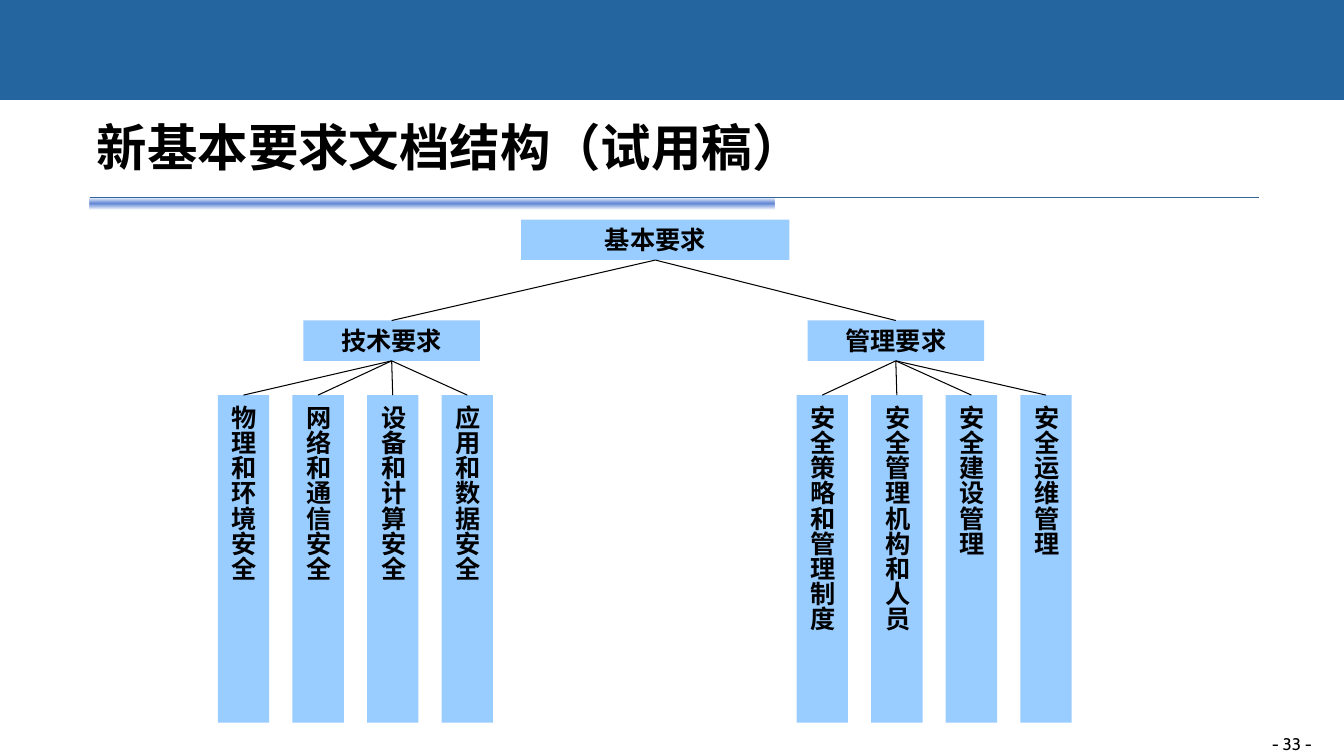
from lxml import etree
from pptx import Presentation
from pptx.dml.color import RGBColor
from pptx.enum.shapes import MSO_CONNECTOR as Connector, MSO_SHAPE as Shape
from pptx.enum.text import MSO_ANCHOR as Anchor, PP_ALIGN as Align
from pptx.oxml import parse_xml
from pptx.oxml.ns import nsdecls, qn
from pptx.util import Inches, Pt

COLORS = {"banner": "25659F", "box": "99CCFF", "text": "000000",
          "rule": "336699", "edge": "5781D5", "middle": "6387D6"}
CJK_FONT = "Noto Sans CJK SC"
BRANCHES = [
    ("技术要求", 3.01, 2.16,
     ["物理和环境安全", "网络和通信安全", "设备和计算安全", "应用和数据安全"]),
    ("管理要求", 8.01, 7.9,
     ["安全策略和管理制度", "安全管理机构和人员", "安全建设管理", "安全运维管理"]),
]
COLUMN_PITCH = 0.74

deck = Presentation()
deck.slide_width, deck.slide_height = Inches(13.33), Inches(7.5)
page = deck.slides.add_slide(deck.slide_layouts[5])


def add_box(left, top, width, height, color="box", text="", vertical=False):
    box = page.shapes.add_shape(Shape.RECTANGLE, *map(Inches, (left, top, width, height)))
    box.shadow.inherit = False
    box.fill.solid()
    box.fill.fore_color.rgb = RGBColor.from_string(COLORS[color])
    box.line.fill.background()
    if text:
        write(box, text, 18, CJK_FONT, True, Align.LEFT if vertical else Align.CENTER)
        box.text_frame.vertical_anchor = Anchor.MIDDLE
        if vertical:
            box.text_frame._txBody.bodyPr.set("vert", "eaVert")
    return box


def write(shape, text, size, font, bold, align):
    shape.text_frame.word_wrap = True
    para = shape.text_frame.paragraphs[0]
    para.alignment = align
    span = para.add_run()
    span.text = text
    for name, value in {"size": Pt(size), "name": font, "bold": bold}.items():
        setattr(span.font, name, value)
    span.font.color.rgb = RGBColor.from_string(COLORS["text"])
    east_asian = etree.SubElement(span.font._element, qn("a:ea"))
    east_asian.set("typeface", CJK_FONT)


add_box(0, 0, 13.33, 0.99, "banner")

bar = add_box(0.89, 1.96, 6.79, 0.12, "middle")
gradient = parse_xml(
    f'<a:gradFill {nsdecls("a")} rotWithShape="1"><a:gsLst>'
    f'<a:gs pos="0"><a:srgbClr val="{COLORS["edge"]}"><a:alpha val="0"/></a:srgbClr></a:gs>'
    f'<a:gs pos="50000"><a:srgbClr val="{COLORS["middle"]}"/></a:gs>'
    f'<a:gs pos="100000"><a:srgbClr val="{COLORS["edge"]}"><a:alpha val="0"/></a:srgbClr></a:gs>'
    '</a:gsLst><a:lin ang="5400000" scaled="0"/></a:gradFill>')
bar_format = bar._element.spPr
bar_format.replace(bar_format.find(qn("a:solidFill")), gradient)

title = page.shapes.title
title_place = {"left": 0.92, "top": 0.73, "width": 11.5, "height": 1.45}
for name, value in title_place.items():
    setattr(title, name, Inches(value))
frame_format = {"margin_left": Inches(0.04), "margin_right": Inches(0.04),
                "margin_top": 0, "margin_bottom": 0, "vertical_anchor": Anchor.MIDDLE}
for name, value in frame_format.items():
    setattr(title.text_frame, name, value)
write(title, "新基本要求文档结构（试用稿）", 36, "DejaVu Sans", True, Align.LEFT)

root = add_box(5.17, 2.18, 2.66, 0.4, text="基本要求")
links = []
for branch_name, branch_left, first_left, topics in BRANCHES:
    branch = add_box(branch_left, 3.18, 1.75, 0.4, text=branch_name)
    links.append((root, branch))
    for index, topic in enumerate(topics):
        column = add_box(first_left + index * COLUMN_PITCH, 3.92, 0.51, 3.25,
                         text=topic, vertical=True)
        links.append((branch, column))

rule = page.shapes.add_connector(
    Connector.STRAIGHT, Inches(0.89), Inches(1.96), Inches(12.49), Inches(1.96))
lines = [(rule, "rule")]
for parent, child in links:
    link = page.shapes.add_connector(Connector.STRAIGHT, 0, 0, 0, 0)
    link.begin_connect(parent, 2)
    link.end_connect(child, 0)
    lines.append((link, "text"))
for line, color in lines:
    line.line.width = Pt(0.75)
    line.line.color.rgb = RGBColor.from_string(COLORS[color])
    etree.SubElement(line._element.spPr, qn("a:effectLst"))

number = page.shapes.add_textbox(Inches(10.22), Inches(7.23), Inches(2.89), Inches(0.27))
write(number, "- 33 -", 12, "Cabin", False, Align.RIGHT)

deck.save("out.pptx")
